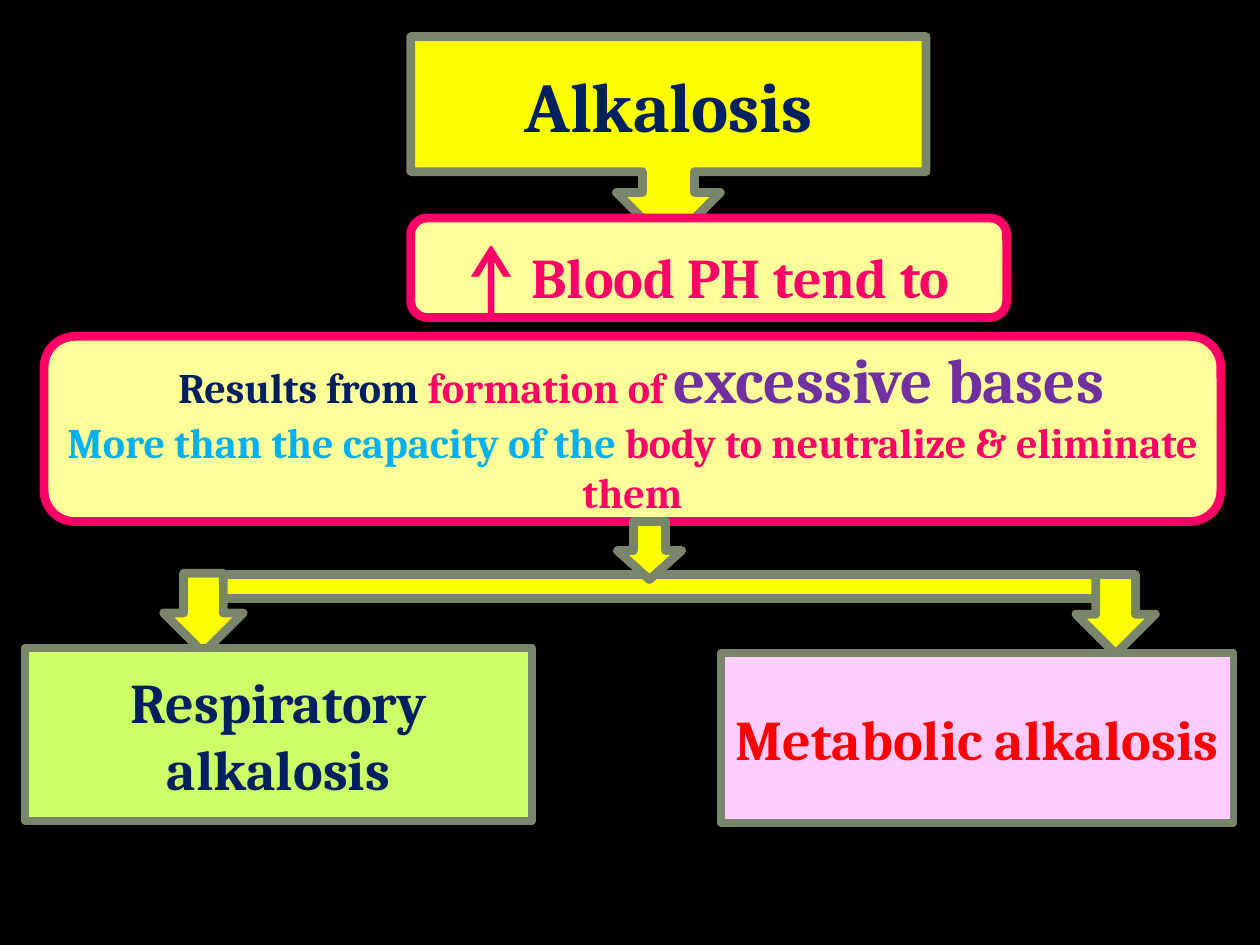
"""Build a one-slide flow chart of alkalosis and its two types."""
from pptx import Presentation
from pptx.dml.color import RGBColor
from pptx.enum.shapes import MSO_SHAPE
from pptx.enum.text import MSO_ANCHOR, PP_ALIGN
from pptx.util import Inches, Pt

CALL = MSO_SHAPE.DOWN_ARROW_CALLOUT
DOWN = MSO_SHAPE.DOWN_ARROW
RECT = MSO_SHAPE.RECTANGLE
ROUND = MSO_SHAPE.ROUNDED_RECTANGLE
MID = MSO_ANCHOR.MIDDLE
CENTER = PP_ALIGN.CENTER

WIDE, HIGH = 10, 7.5
BLACK, NAVY, PINK = "000000", "002060", "FF0066"
YELLOW, CREAM, OLIVE = "FFFF00", "FFFF99", "7A866C"
SERIF, SANS = "Cambria", "Calibri"

TITLE = [[("Alkalosis", 40, NAVY, SERIF)]]
BLOOD = [[("Blood PH tend to ", 32, PINK, SERIF), ("↑", 44, PINK, SANS)]]
CAUSE = [
    [
        ("Results from ", 24, NAVY, SERIF),
        ("formation of ", 24, PINK, SERIF),
        ("excessive bases ", 36, "7030A0", SERIF),
    ],
    [
        ("More than the capacity of the ", 24, "00B0F0", SERIF),
        ("body to neutralize & eliminate them", 24, PINK, SERIF),
    ],
]
LUNG = [[("Respiratory alkalosis", 32, NAVY, SERIF)]]
METAB = [[("Metabolic alkalosis", 32, "FF0000", SERIF)]]

# Each place is left, top, width and height in percent of the slide.
PARTS = [
    (CALL, (32.6, 3.87, 40.9, 22), YELLOW, OLIVE, 5, TITLE),
    (RECT, (14.6, 60.8, 74, 2.53), YELLOW, OLIVE, 5, []),
    (DOWN, (13, 60.67, 6.3, 8.4), YELLOW, OLIVE, 5, []),
    (DOWN, (85.4, 60.8, 6.3, 8.4), YELLOW, OLIVE, 5, []),
    (RECT, (2, 68.53, 40.2, 18.4), "CCFF66", OLIVE, 4.5, LUNG),
    (RECT, (57.2, 69.07, 40.7, 18), "FFCCFF", OLIVE, 4.5, METAB),
    (ROUND, (32.6, 23.07, 47.3, 10.53), CREAM, PINK, 5, BLOOD),
    (ROUND, (3.5, 35.6, 93.4, 19.6), CREAM, PINK, 5, CAUSE),
    (DOWN, (49, 55.2, 5.1, 6.13), YELLOW, OLIVE, 5, []),
]


def paint(fill, tone):
    fill.solid()
    fill.fore_color.rgb = RGBColor.from_string(tone)


def write(frame, paras):
    frame.word_wrap = True
    frame.vertical_anchor = MID
    for i, runs in enumerate(paras):
        para = frame.paragraphs[0] if i == 0 else frame.add_paragraph()
        para.alignment = CENTER
        para._p.get_or_add_pPr().set("rtl", "1")
        for text, size, tone, face in runs:
            run = para.add_run()
            run.text = text
            form = {"size": Pt(size), "name": face, "bold": True}
            for key, value in form.items():
                setattr(run.font, key, value)
            paint(run.font.fill, tone)


def draw(slide, kind, place, fill, edge, width, paras):
    spans = (WIDE, HIGH, WIDE, HIGH)
    box = [Inches(part * span / 100) for part, span in zip(place, spans)]
    shape = slide.shapes.add_shape(kind, *box)
    shape.shadow.inherit = False
    paint(shape.fill, fill)
    paint(shape.line.fill, edge)
    shape.line.width = Pt(width)
    if paras:
        write(shape.text_frame, paras)


def main():
    deck = Presentation()
    deck.slide_width, deck.slide_height = Inches(WIDE), Inches(HIGH)
    slide = deck.slides.add_slide(deck.slide_layouts[6])
    paint(slide.background.fill, BLACK)
    for part in PARTS:
        draw(slide, *part)
    deck.save("out.pptx")


if __name__ == "__main__":
    main()
